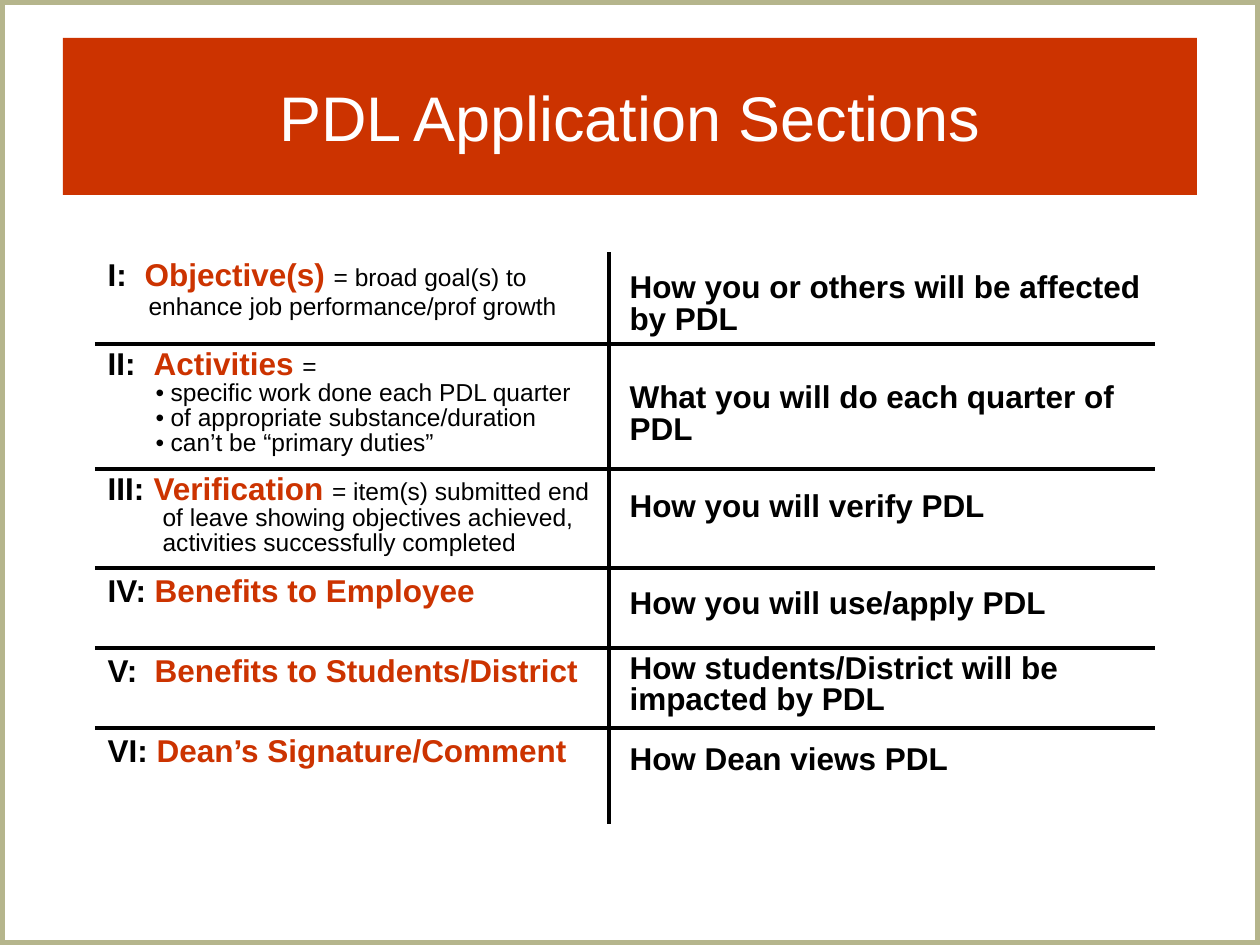
from lxml import etree
from pptx import Presentation
from pptx import util as u
from pptx.dml.color import RGBColor
from pptx.enum import shapes, text
from pptx.oxml.ns import qn

PX = 914400 / 126
FONT = "Arial"
RED = RGBColor(0xCC, 0x33, 0x00)
KHAKI = RGBColor(0xB5, 0xB5, 0x8C)
BLACK = RGBColor(0, 0, 0)
WHITE = RGBColor(0xFF, 0xFF, 0xFF)

# Run formats
LABEL = {"size": u.Pt(18), "bold": True}
HEADING = {**LABEL, "color": RED}
DETAIL = {"size": u.Pt(14), "bold": False}

COLUMN_WIDTHS = [514, 546]
TIGHT = 0.9

# Per row: height, numeral, heading, heading indent, line spacing,
# text beside the heading, lines below it, their indent, bulleted?
SECTIONS = [
    (92, "I:", "Objective(s)", 37, 1, "= broad goal(s) to",
     ["enhance job performance/prof growth"], 41, False),
    (125, "II:", "Activities", 46, TIGHT, "=",
     ["specific work done each PDL quarter", "of appropriate substance/duration",
      "can’t be “primary duties”"], 63, True),
    (99, "III:", "Verification", 46, TIGHT, "= item(s) submitted end",
     ["of leave showing objectives achieved,",
      "activities successfully completed"], 55, False),
    (80, "IV:", "Benefits to Employee", 47, 1, "", [], 0, False),
    (80, "V:", "Benefits to Students/District", 47, 1, "", [], 0, False),
    (96, "VI:", "Dean’s Signature/Comment", 49, 1, "", [], 0, False),
]

# Per row: meaning, top margin
MEANINGS = [
    ("How you or others will be affected by PDL", 21),
    ("What you will do each quarter of PDL", 39),
    ("How you will verify PDL", 23),
    ("How you will use/apply PDL", 21),
    ("How students/District will be impacted by PDL", 6),
    ("How Dean views PDL", 17),
]


def px(length):
    return u.Emu(round(length * PX))


def add_run(paragraph, words, style):
    run = paragraph.add_run()
    run.text = words
    style = {"name": FONT, "color": BLACK, **style}
    run.font.color.rgb = style.pop("color")
    for name, value in style.items():
        setattr(run.font, name, value)


def set_indent(paragraph, left, first=0, bullet=False):
    properties = paragraph._p.get_or_add_pPr()
    properties.set("marL", str(px(left)))
    properties.set("indent", str(px(first)))
    if bullet:
        etree.SubElement(properties, qn("a:buFont")).set("typeface", FONT)
        etree.SubElement(properties, qn("a:buChar")).set("char", "•")


def add_rectangle(slide, left, top, width, height):
    shape = slide.shapes.add_shape(shapes.MSO_SHAPE.RECTANGLE,
                                   px(left), px(top), px(width), px(height))
    shape.shadow.inherit = False
    return shape


def add_frame(slide):
    frame = add_rectangle(slide, 0, 0, 1260, 945)
    frame.fill.background()
    frame.line.color.rgb = KHAKI
    frame.line.width = u.Pt(6)


def add_title(slide):
    banner = add_rectangle(slide, 63, 38, 1134, 157)
    banner.fill.solid()
    banner.fill.fore_color.rgb = RED
    banner.line.fill.background()
    banner.text_frame.vertical_anchor = text.MSO_ANCHOR.MIDDLE
    paragraph = banner.text_frame.paragraphs[0]
    paragraph.alignment = text.PP_ALIGN.CENTER
    add_run(paragraph, "PDL Application Sections", {"size": u.Pt(36), "color": WHITE})


def set_borders(cell, visible):
    properties = cell._tc.get_or_add_tcPr()
    for side in "LRTB":
        line = etree.SubElement(properties, qn(f"a:ln{side}"), w=str(u.Pt(2.25)))
        if side in visible:
            fill = etree.SubElement(line, qn("a:solidFill"))
            etree.SubElement(fill, qn("a:srgbClr")).set("val", str(BLACK))
        else:
            etree.SubElement(line, qn("a:noFill"))
    cell.fill.background()


def fill_section(cell, section):
    _, numeral, heading, hang, spacing, beside, below, indent, bulleted = section
    paragraph = cell.text_frame.paragraphs[0]
    paragraph.line_spacing = spacing
    set_indent(paragraph, hang, -hang)
    add_run(paragraph, numeral + "\t", LABEL)
    add_run(paragraph, heading + (" " if beside else ""), HEADING)
    if beside:
        add_run(paragraph, beside, DETAIL)
    for words in below:
        paragraph = cell.text_frame.add_paragraph()
        paragraph.line_spacing = spacing
        set_indent(paragraph, indent, -15 if bulleted else 0, bulleted)
        add_run(paragraph, words, DETAIL)


def fill_meaning(cell, words, margin_top):
    cell.margin_top = px(margin_top)
    paragraph = cell.text_frame.paragraphs[0]
    paragraph.line_spacing = TIGHT
    set_indent(paragraph, 8)
    add_run(paragraph, words, LABEL)


def add_sections_table(slide):
    heights = [section[0] for section in SECTIONS]
    table = slide.shapes.add_table(len(SECTIONS), 2, px(95), px(252),
                                   px(sum(COLUMN_WIDTHS)), px(sum(heights))).table
    table.first_row = table.horz_banding = False
    for column, width in zip(table.columns, COLUMN_WIDTHS):
        column.width = px(width)
    for index, (section, meaning) in enumerate(zip(SECTIONS, MEANINGS)):
        table.rows[index].height = px(heights[index])
        left, right = table.cell(index, 0), table.cell(index, 1)
        fill_section(left, section)
        fill_meaning(right, *meaning)
        # Only the inner grid lines show
        inner = ("T" if index else "") + ("B" if index < len(SECTIONS) - 1 else "")
        set_borders(left, inner + "R")
        set_borders(right, inner + "L")


def main():
    presentation = Presentation()
    presentation.slide_width, presentation.slide_height = u.Inches(10), u.Inches(7.5)
    slide = presentation.slides.add_slide(presentation.slide_layouts[6])
    add_frame(slide)
    add_title(slide)
    add_sections_table(slide)
    presentation.save("out.pptx")


if __name__ == "__main__":
    main()
